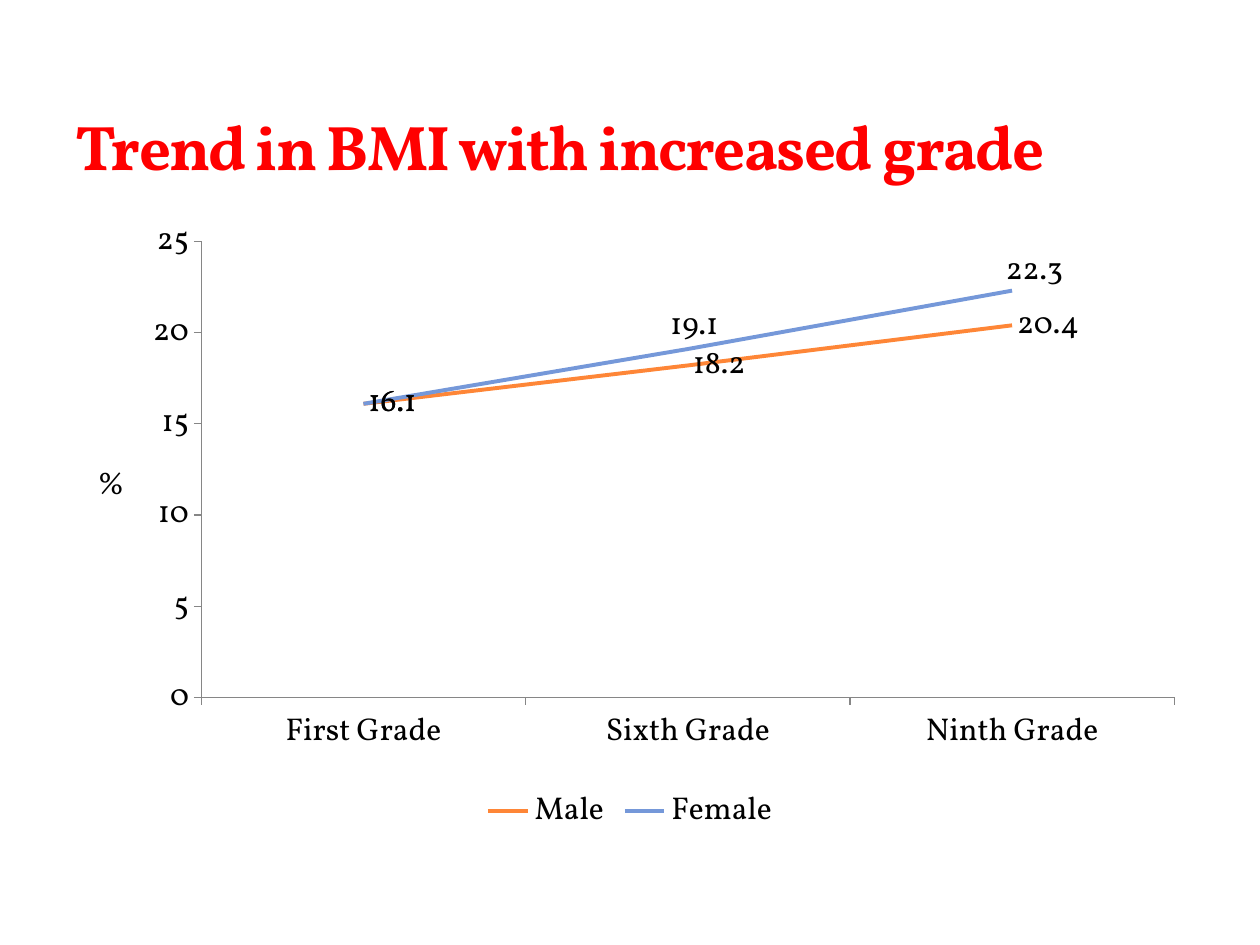
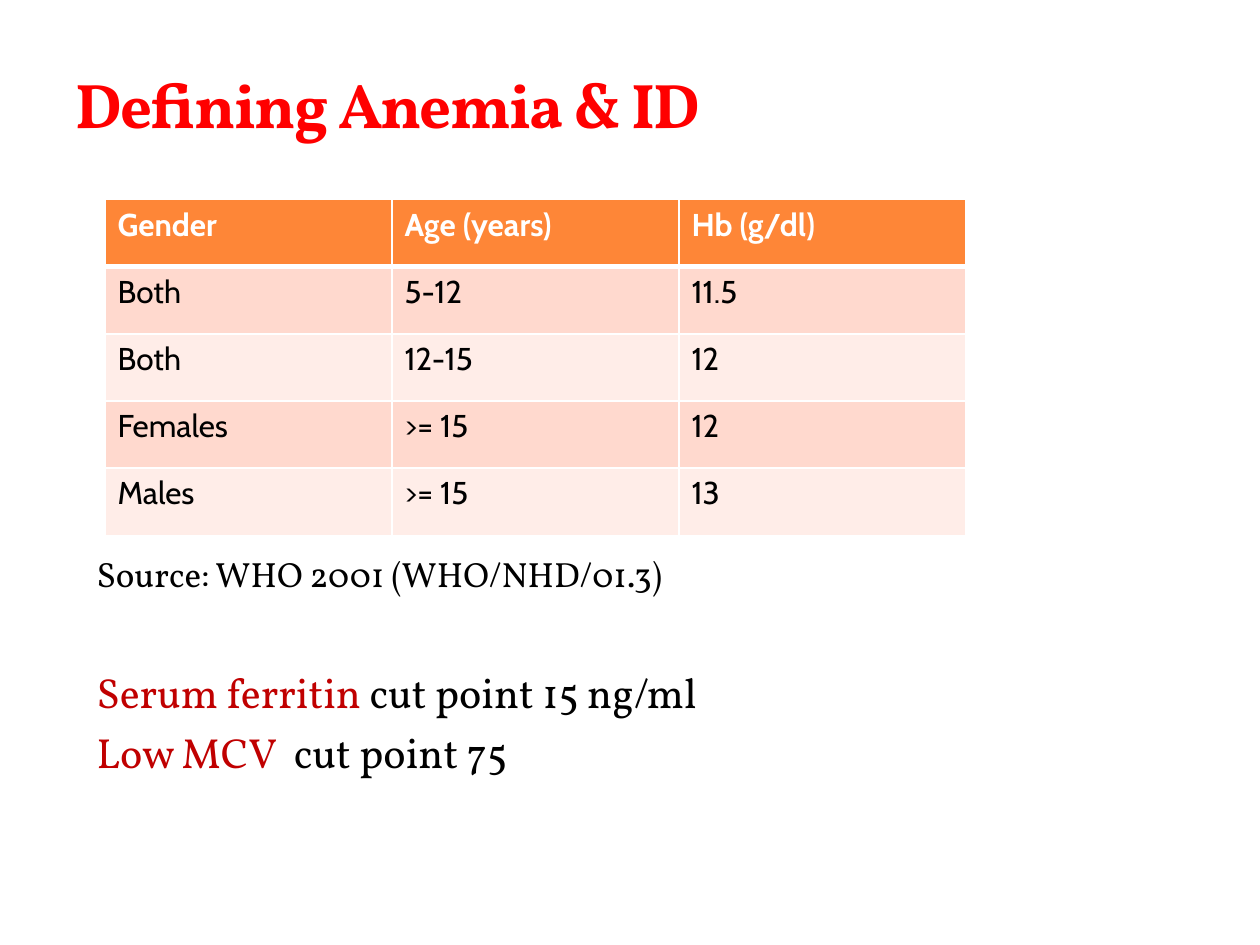
from lxml.etree import Element, SubElement
from pptx import Presentation
from pptx.chart.data import CategoryChartData
from pptx.dml.color import RGBColor
from pptx.enum.chart import (XL_CHART_TYPE, XL_LABEL_POSITION, XL_LEGEND_POSITION,
                             XL_MARKER_STYLE, XL_TICK_MARK)
from pptx.enum.text import MSO_ANCHOR, MSO_AUTO_SIZE, PP_ALIGN
from pptx.oxml.ns import qn
from pptx.util import Inches, Pt

COLORS = {"title": "FF0000", "outline": "E1D68B", "text": "000000", "accent": "C00000",
          "white": "FFFFFF", "male": "FE8637", "female": "7598D9", "axis": "868686",
          "header": "FE8637", "band1": "FFD9CE", "band2": "FFEDE8"}
FONT, TABLE_FONT = "Vollkorn", "Cabin"

prs = Presentation()
prs.slide_width, prs.slide_height = Inches(10), Inches(7.5)
UNIT = prs.slide_width / 60  # square grid: 60 columns by 45 rows


def grid(*cells):
    return [round(n * UNIT) for n in cells]


def write(p, text, size=18, color="text", font=FONT, bold=False):
    r = p.add_run()
    r.text = text
    r.font.size, r.font.name, r.font.bold = Pt(size), font, bold
    r.font.color.rgb = RGBColor.from_string(COLORS[color])
    return r


# Slides and their titles
slides = []
for layout, title, rows in [(5, "Trend in BMI with increased grade", 8),
                            (1, "Defining Anemia & ID", 6)]:
    s = prs.slides.add_slide(prs.slide_layouts[layout])
    sp = s.shapes.title
    sp.left, sp.top, sp.width, sp.height = grid(3, 1, 54, rows)
    tf = sp.text_frame
    tf.auto_size, tf.vertical_anchor = MSO_AUTO_SIZE.NONE, MSO_ANCHOR.BOTTOM
    p = tf.paragraphs[0]
    p.alignment = PP_ALIGN.LEFT
    rPr = write(p, title, size=36, color="title", bold=True).font._element
    rPr.set("spc", "-100")
    ln = Element(qn("a:ln"), w=str(Pt(0.25)))
    clr = SubElement(SubElement(ln, qn("a:solidFill")), qn("a:srgbClr"), val=COLORS["outline"])
    SubElement(clr, qn("a:alpha"), val="25000")
    rPr.insert(0, ln)
    slides.append(s)
trend, anemia = slides

# Line chart
data = CategoryChartData()
data.categories = ["First Grade", "Sixth Grade", "Ninth Grade"]
data.add_series("Male", [16.1, 18.2, 20.4])
data.add_series("Female", [16.1, 19.1, 22.3])
chart = trend.shapes.add_chart(XL_CHART_TYPE.LINE, *grid(3, 10, 54, 30), data).chart
chart.has_title = False
chart.font.size, chart.font.name = Pt(18), FONT
chart.font.color.rgb = RGBColor.from_string(COLORS["text"])
chart.has_legend = True
chart.legend.position = XL_LEGEND_POSITION.BOTTOM
chart.legend.include_in_layout = False

for axis in (chart.category_axis, chart.value_axis):
    axis.has_major_gridlines = False
    axis.major_tick_mark = XL_TICK_MARK.OUTSIDE
    axis.minor_tick_mark = XL_TICK_MARK.NONE
    axis.format.line.width = Pt(0.75)
    axis.format.line.color.rgb = RGBColor.from_string(COLORS["axis"])
axis = chart.value_axis
axis.minimum_scale, axis.maximum_scale, axis.major_unit = 0, 25, 5
tf = axis.axis_title.text_frame
write(tf.paragraphs[0], "%")
tf._txBody.bodyPr.set("rot", "0")
tf._txBody.bodyPr.set("vert", "horz")

male, female = chart.plots[0].series
for series, color in [(male, "male"), (female, "female")]:
    series.smooth = False
    series.marker.style = XL_MARKER_STYLE.NONE
    series.format.line.width = Pt(2.25)
    series.format.line.color.rgb = RGBColor.from_string(COLORS[color])
    series.data_labels.show_value = True
    series.data_labels.position = XL_LABEL_POSITION.RIGHT
for i in (1, 2):
    label = female.points[i].data_label
    label.font.size, label.font.name = Pt(18), FONT
    label.font.color.rgb = RGBColor.from_string(COLORS["text"])
    label.position = XL_LABEL_POSITION.RIGHT

# Plot area and the two raised labels, as shares of the chart
sixth, ninth = female._element.findall(".//" + qn("c:dLbl"))
plot = chart._chartSpace.find(".//" + qn("c:plotArea"))
for parent, index, parts in [
        (plot, 0, dict(layoutTarget="inner", xMode="edge", yMode="edge",
                       x=0.122, y=0.05, w=0.858, h=0.724)),
        (sixth, 1, dict(x=-0.02, y=-0.035)),
        (ninth, 1, dict(x=-0.01, y=-0.03))]:
    for old in parent.findall(qn("c:layout")):
        parent.remove(old)
    layout = Element(qn("c:layout"))
    manual = SubElement(layout, qn("c:manualLayout"))
    for tag, val in parts.items():
        SubElement(manual, qn("c:" + tag), val=str(val))
    parent.insert(index, layout)

# Source and cut points
sp = anemia.placeholders[1]
sp.left, sp.top, sp.width, sp.height = grid(4, 26, 54, 15)
tf = sp.text_frame
tf.auto_size = MSO_AUTO_SIZE.NONE
for i, (before, size, runs) in enumerate([
        (0, 20, [("Source: WHO 2001 (WHO/NHD/01.3)", "text")]),
        (41, 24, [("Serum ferritin ", "accent"), ("cut point 15 ng/ml", "text")]),
        (6, 24, [("Low MCV", "accent"), ("  cut point 75", "text")])]):
    p = tf.add_paragraph() if i else tf.paragraphs[0]
    p.space_before = Pt(before)
    pPr = p._p.get_or_add_pPr()
    pPr.set("marL", "0")
    pPr.set("indent", "0")
    SubElement(pPr, qn("a:buNone"))
    for text, color in runs:
        write(p, text, size=size, color=color)

# Haemoglobin table
rows = [("Gender", "Age (years)", "Hb (g/dl)"),
        ("Both", "5-12", "11.5"),
        ("Both", "12-15", "12"),
        ("Females", ">= 15", "12"),
        ("Males", ">= 15", "13")]
table = anemia.shapes.add_table(len(rows), 3, *grid(5, 9.5, 41, 16)).table
for i, row in enumerate(rows):
    fill = "header" if i == 0 else "band1" if i % 2 else "band2"
    for j, text in enumerate(row):
        cell = table.cell(i, j)
        write(cell.text_frame.paragraphs[0], text, font=TABLE_FONT,
              color="text" if i else "white", bold=i == 0)
        tcPr = cell._tc.get_or_add_tcPr()
        for side in "LRTB":
            thick = (i, side) in [(0, "B"), (1, "T")]
            ln = SubElement(tcPr, qn("a:ln" + side), w=str(Pt(3 if thick else 1)))
            SubElement(SubElement(ln, qn("a:solidFill")), qn("a:srgbClr"), val=COLORS["white"])
        cell.fill.solid()
        cell.fill.fore_color.rgb = RGBColor.from_string(COLORS[fill])

prs.save("out.pptx")
